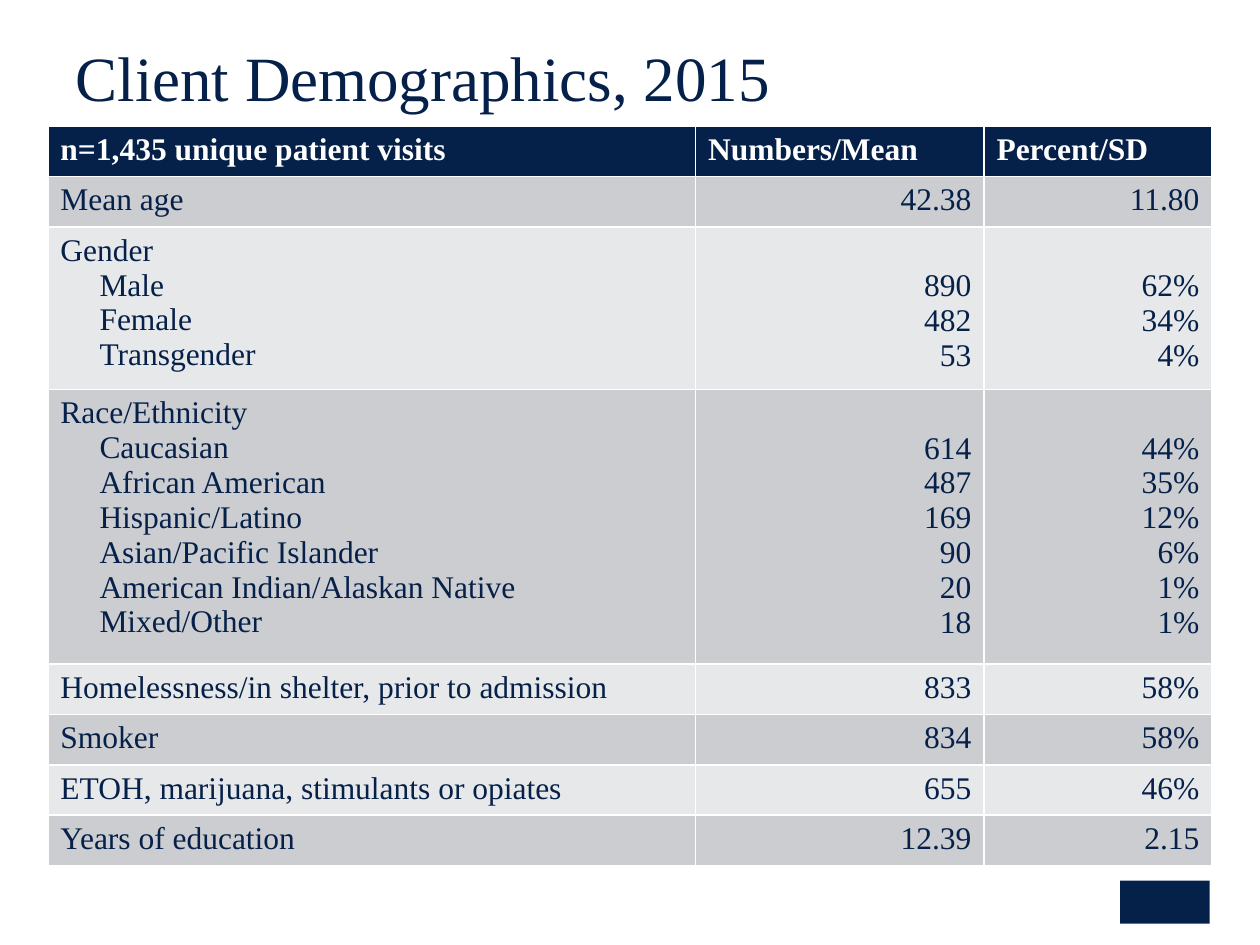
from dataclasses import dataclass

from pptx import Presentation
from pptx.dml.color import RGBColor
from pptx.enum import shapes, text
from pptx.util import Inches, Pt

NAVY = RGBColor(0x05, 0x20, 0x49)
WHITE = RGBColor(0xFF, 0xFF, 0xFF)
DARK = RGBColor(0xCC, 0xCD, 0xD0)
LIGHT = RGBColor(0xE7, 0xE8, 0xE9)
FONT = "Times New Roman"
LINE = 0.28


@dataclass
class Row:
    label: str
    counts: list[str]
    shares: list[str]
    items: tuple[str, ...] = ()
    height: float = 0.4


ROWS = [
    Row("Mean age", ["42.38"], ["11.80"]),
    Row("Gender", ["890", "482", "53"], ["62%", "34%", "4%"],
        ("Male", "Female", "Transgender"), 1.29),
    Row("Race/Ethnicity",
        ["614", "487", "169", "90", "20", "18"],
        ["44%", "35%", "12%", "6%", "1%", "1%"],
        ("Caucasian", "African American", "Hispanic/Latino",
         "Asian/Pacific Islander", "American Indian/Alaskan Native",
         "Mixed/Other"), 2.18),
    Row("Homelessness/in shelter, prior to admission", ["833"], ["58%"]),
    Row("Smoker", ["834"], ["58%"]),
    Row("ETOH, marijuana, stimulants or opiates", ["655"], ["46%"]),
    Row("Years of education", ["12.39"], ["2.15"]),
]
HEADS = ["n=1,435 unique patient visits", "Numbers/Mean", "Percent/SD"]
WIDTHS = [5.14, 2.29, 1.81]


def add_run(para, words: str, size: float, color: RGBColor, bold: bool = False) -> None:
    run = para.add_run()
    run.text = words
    run.font.name = FONT
    run.font.size = Pt(size)
    run.font.bold = bold
    run.font.color.rgb = color


def fill_cell(cell, lines: list[str], back: RGBColor, color: RGBColor = NAVY,
              bold: bool = False, right: bool = False, inset: float = 0) -> None:
    cell.fill.solid()
    cell.fill.fore_color.rgb = back
    frame = cell.text_frame
    for i, line in enumerate(lines):
        para = frame.add_paragraph() if i else frame.paragraphs[0]
        if right:
            para.alignment = text.PP_ALIGN.RIGHT
        if i and inset:
            para._p.get_or_add_pPr().set("marL", str(Inches(inset)))
        add_run(para, line, 18, color, bold)


def draw_row(grid, index: int, row: Row) -> None:
    back = DARK if index % 2 else LIGHT
    grid.rows[index].height = Inches(row.height)
    fill_cell(grid.cell(index, 0), [row.label, *row.items], back, inset=0.31)
    for col, values in enumerate((row.counts, row.shares), 1):
        cell = grid.cell(index, col)
        fill_cell(cell, values, back, right=True)
        if row.items:
            cell.margin_top = Inches(0.05 + LINE)


def draw_title(slide) -> None:
    title = slide.shapes.title
    title.left, title.top = Inches(0.5), Inches(0.3)
    title.width, title.height = Inches(9), Inches(0.7)
    frame = title.text_frame
    frame.auto_size = text.MSO_AUTO_SIZE.NONE
    frame.vertical_anchor = text.MSO_ANCHOR.MIDDLE
    para = frame.paragraphs[0]
    para.alignment = text.PP_ALIGN.LEFT
    para.line_spacing = 0.85
    add_run(para, "Client Demographics, 2015", 36, NAVY)


def draw_badge(slide) -> None:
    badge = slide.shapes.add_shape(
        shapes.MSO_SHAPE.RECTANGLE,
        Inches(8.89), Inches(6.99), Inches(0.71), Inches(0.34))
    badge.shadow.inherit = False
    badge.fill.solid()
    badge.fill.fore_color.rgb = NAVY
    badge.line.fill.background()


def draw_table(slide) -> None:
    high = 0.4 + sum(row.height for row in ROWS)
    grid = slide.shapes.add_table(
        len(ROWS) + 1, len(HEADS), Inches(0.38), Inches(1),
        Inches(sum(WIDTHS)), Inches(high)).table
    grid.rows[0].height = Inches(0.4)
    for col, (head, width) in enumerate(zip(HEADS, WIDTHS)):
        grid.columns[col].width = Inches(width)
        fill_cell(grid.cell(0, col), [head], NAVY, WHITE, bold=True)
    for index, row in enumerate(ROWS, 1):
        draw_row(grid, index, row)


def main() -> None:
    deck = Presentation()
    deck.slide_width, deck.slide_height = Inches(10), Inches(7.5)
    slide = deck.slides.add_slide(deck.slide_layouts[5])
    draw_title(slide)
    draw_badge(slide)
    draw_table(slide)
    deck.save("out.pptx")


if __name__ == "__main__":
    main()
